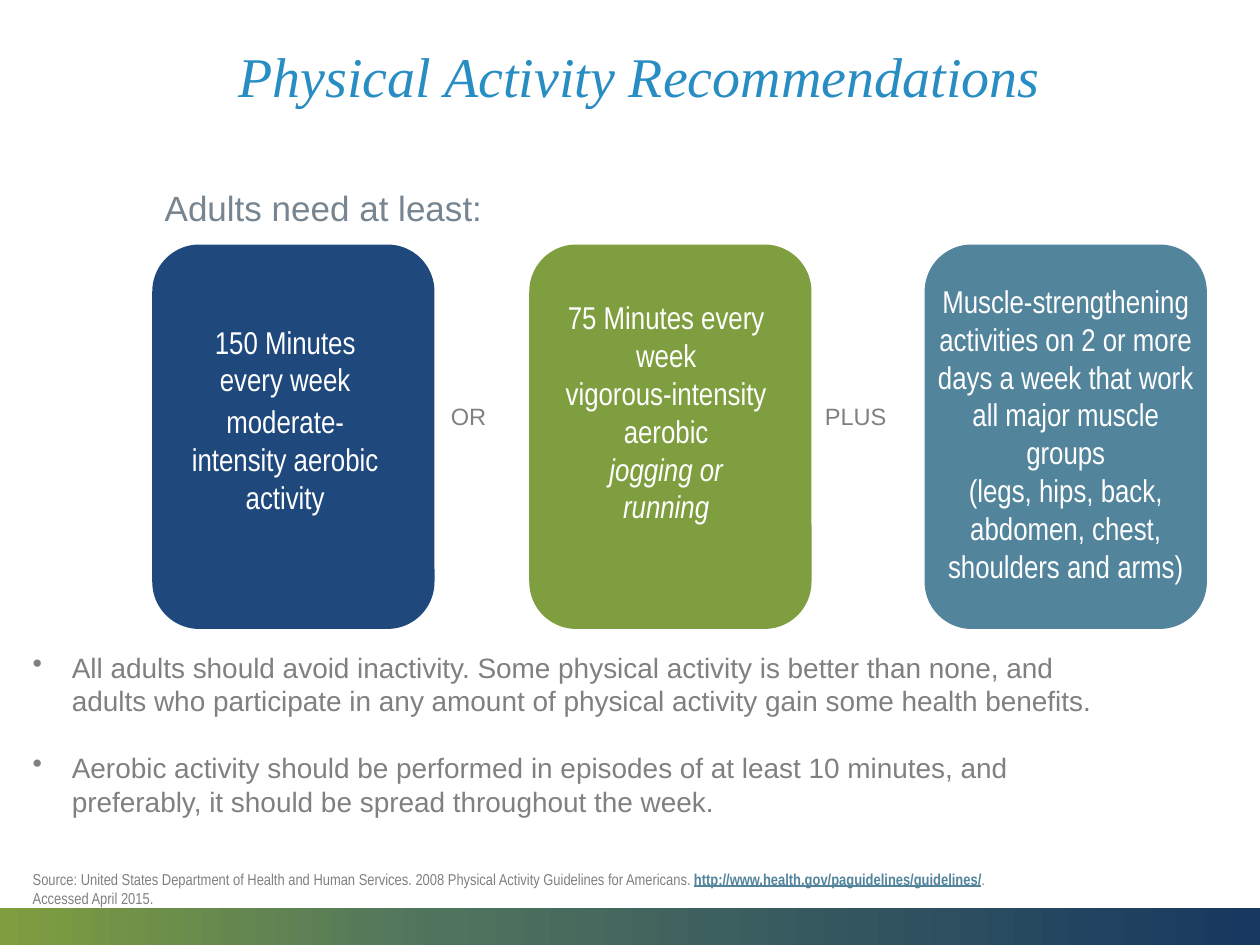
import copy

import pptx
import pptx.dml.color
import pptx.enum.shapes
import pptx.enum.text
import pptx.oxml
import pptx.oxml.ns
import pptx.util

Cm = pptx.util.Cm
Pt = pptx.util.Pt
ALIGN = pptx.enum.text.PP_ALIGN
ANCHOR = pptx.enum.text.MSO_ANCHOR
SHAPES = pptx.enum.shapes.MSO_SHAPE

COLORS = {
    "title": "288DC2",
    "heading": "778591",
    "body": "808080",
    "white": "FFFFFF",
    "navy": "1F497D",
    "green": "7F9E3F",
    "teal": "52849C",
    "bar_middle": "4F745E",
    "bar_end": "183860",
}


def rgb(name):
    return pptx.dml.color.RGBColor.from_string(COLORS[name])


class SlideBuilder:
    def __init__(self, presentation):
        self.slide = presentation.slides.add_slide(presentation.slide_layouts[6])

    def shape(self, kind, left, top, width, height, color=None):
        shape = self.slide.shapes.add_shape(
            kind, Cm(left), Cm(top), Cm(width), Cm(height))
        shape.shadow.inherit = False
        shape.line.fill.background()
        if color:
            shape.fill.solid()
            shape.fill.fore_color.rgb = rgb(color)
        return shape

    def gradient_bar(self, left, top, width, height, stops):
        """Fill a bar from left to right; stops are (position, color) pairs."""
        bar = self.shape(SHAPES.RECTANGLE, left, top, width, height)
        bar.fill.gradient()
        bar.fill.gradient_angle = 0
        stop_list = bar._element.spPr.find(".//" + pptx.oxml.ns.qn("a:gsLst"))
        while len(stop_list) < len(stops):
            stop_list.append(copy.deepcopy(stop_list[0]))
        for stop, (position, color) in zip(bar.fill.gradient_stops, stops):
            stop.position = position
            stop.color.rgb = rgb(color)

    def text(self, left, top, width, height, paragraphs, size, color,
             font="Arial", align=ALIGN.LEFT, anchor=ANCHOR.TOP,
             line_spacing=None, space_before=0, space_after=0, bullet=False):
        """Add a text box; each paragraph is a list of (text, style) runs."""
        box = self.slide.shapes.add_textbox(
            Cm(left), Cm(top), Cm(width), Cm(height))
        frame = box.text_frame
        frame.word_wrap = True
        frame.vertical_anchor = anchor
        for index, runs in enumerate(paragraphs):
            paragraph = frame.add_paragraph() if index else frame.paragraphs[0]
            paragraph.alignment = align
            if line_spacing:
                paragraph.line_spacing = line_spacing
            if index and space_before:
                paragraph.space_before = Pt(space_before)
            if space_after:
                paragraph.space_after = Pt(space_after)
            if bullet:
                self.add_bullet(paragraph)
            for content, style in runs:
                run = paragraph.add_run()
                run.text = content
                run.font.name = font
                run.font.size = Pt(size)
                run.font.color.rgb = rgb(style.get("color", color))
                run.font.italic = style.get("italic", False)
                run.font.bold = style.get("bold", False)
                run.font.underline = style.get("underline", False)
        return frame

    def add_bullet(self, paragraph):
        properties = paragraph._p.get_or_add_pPr()
        properties.set("marL", str(Cm(0.79)))
        properties.set("indent", str(-Cm(0.79)))
        bullet = pptx.oxml.parse_xml(
            f'<a:buChar {pptx.oxml.ns.nsdecls("a")} char="•"/>')
        properties.append(bullet)

    def card(self, left, color):
        self.shape(SHAPES.ROUNDED_RECTANGLE, left, 4.93, 5.69, 7.75, color)

    def card_text(self, left, top, width, paragraphs):
        return self.text(left, top, width, 6.4, paragraphs, 18, "white",
                         font="Arial Narrow", align=ALIGN.CENTER)

    def joining_word(self, left, width, word):
        self.text(left, 7.98, width, 0.84, [[(word, {})]], 13.5, "body")


def main():
    presentation = pptx.Presentation()
    presentation.slide_width = Cm(25.4)
    presentation.slide_height = Cm(19.05)
    builder = SlideBuilder(presentation)

    builder.gradient_bar(0, 18.31, 25.4, 0.74, [
        (0, "green"), (0.35, "bar_middle"), (1, "bar_end")])
    builder.text(4.32, 0.89, 17.15, 1.42,
                 [[("Physical Activity Recommendations", {"italic": True})]],
                 32, "title", font="Times New Roman", align=ALIGN.CENTER,
                 anchor=ANCHOR.MIDDLE, line_spacing=0.9)
    builder.text(3.07, 3.73, 17.15, 1.1, [[("Adults need at least:", {})]],
                 20, "heading", line_spacing=0.9)

    for left, color in ((3.07, "navy"), (10.67, "green"), (18.64, "teal")):
        builder.card(left, color)
    moderate = builder.card_text(3.45, 6.38, 4.6, [
        [("150 Minutes", {})],
        [("every week", {})],
        [("moderate-intensity aerobic activity", {})],
    ])
    moderate.paragraphs[1].space_after = Pt(2.2)
    builder.card_text(11.13, 5.89, 4.6, [
        [("75 Minutes every week", {})],
        [("vigorous-intensity aerobic", {})],
        [("jogging or running", {"italic": True})],
    ])
    builder.card_text(18.64, 5.56, 5.69, [
        [("Muscle-strengthening activities on 2 or more days a week "
          "that work all major muscle groups", {})],
        [("(legs, hips, back, abdomen, chest, shoulders and arms)", {})],
    ])
    builder.joining_word(8.84, 1.98, "OR")
    builder.joining_word(16.38, 3.07, "PLUS")

    builder.text(0.41, 12.98, 22.3, 3.68, [
        [("All adults should avoid inactivity. Some physical activity is "
          "better than none, and adults who participate in any amount of "
          "physical activity gain some health benefits.", {})],
        [("Aerobic activity should be performed in episodes of at least "
          "10 minutes, and preferably, it should be spread throughout "
          "the week.", {})],
    ], 16, "body", space_before=19, bullet=True)
    link_style = {"color": "teal", "bold": True, "underline": True}
    builder.text(0.41, 17.4, 20.6, 1.02, [[
        ("Source: United States Department of Health and Human Services. "
         "2008 Physical Activity Guidelines for Americans. ", {}),
        ("http://www.health.gov/paguidelines/guidelines/", link_style),
        (". Accessed April 2015.", {}),
    ]], 9, "body", font="Arial Narrow")

    presentation.save("out.pptx")


if __name__ == "__main__":
    main()
